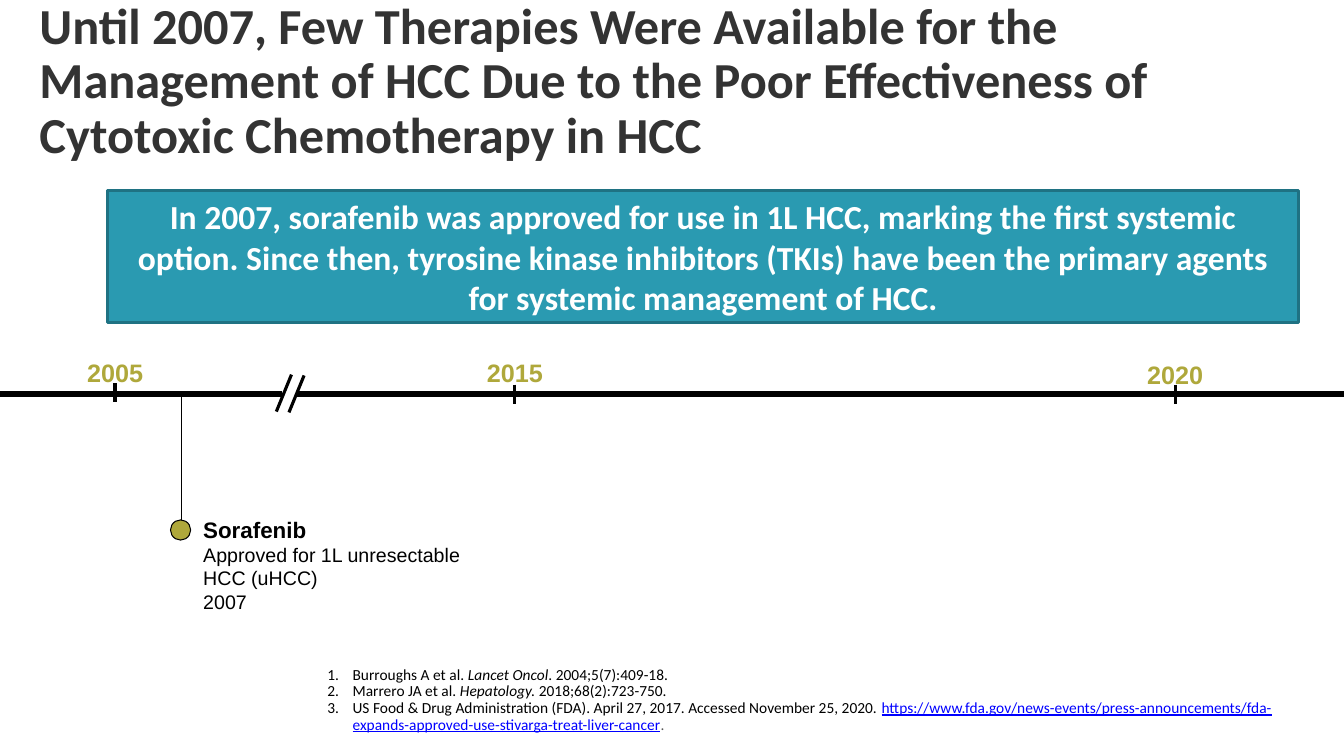
"""Build the slide on the early timeline of systemic HCC therapy."""
from dataclasses import dataclass

from lxml import etree
from pptx import Presentation
from pptx.dml.color import RGBColor
from pptx.enum.shapes import MSO_CONNECTOR, MSO_SHAPE
from pptx.enum.text import MSO_ANCHOR, MSO_AUTO_SIZE, PP_ALIGN
from pptx.oxml.ns import qn
from pptx.util import Inches, Pt

STRAIGHT = MSO_CONNECTOR.STRAIGHT
RECTANGLE, OVAL = MSO_SHAPE.RECTANGLE, MSO_SHAPE.OVAL
TOP, MIDDLE = MSO_ANCHOR.TOP, MSO_ANCHOR.MIDDLE
LEFT, CENTER = PP_ALIGN.LEFT, PP_ALIGN.CENTER
NO_FIT = MSO_AUTO_SIZE.NONE

BLACK = RGBColor(0x00, 0x00, 0x00)
WHITE = RGBColor(0xFF, 0xFF, 0xFF)
CHARCOAL = RGBColor(0x33, 0x33, 0x33)
GRAY = RGBColor(0x59, 0x59, 0x59)
LINK_BLUE = RGBColor(0x00, 0x00, 0xFF)
TEAL = RGBColor(0x2A, 0x9A, 0xB1)
DARK_TEAL = RGBColor(0x1F, 0x72, 0x83)
OLIVE = RGBColor(0xAF, 0xA8, 0x3B)

SLIDE_WIDTH, SLIDE_HEIGHT = Inches(13.333), Inches(7.5)
COLUMNS, ROWS = 160, 90
AXIS_ROW = 46.9
LABEL_WIDTH, LABEL_HEIGHT = 12, 3.6
TICK_LENGTH = 2.3
DOT_SIZE = 2.4


@dataclass(frozen=True)
class Style:
    """Font settings of a run."""
    font: str
    size: float
    color: RGBColor
    bold: bool = False
    italic: bool = False
    underline: bool = False


@dataclass(frozen=True)
class Area:
    """A rectangle in grid columns and rows."""
    left: float
    top: float
    width: float
    height: float


@dataclass(frozen=True)
class Stroke:
    """A straight black line between two grid points."""
    x1: float
    y1: float
    x2: float
    y2: float
    weight: float


@dataclass(frozen=True)
class Year:
    """A labelled tick on the time axis."""
    text: str
    column: float
    label_row: float
    tick_row: float


TITLE_STYLE = Style("Calibri", 36, CHARCOAL, bold=True)
BANNER_STYLE = Style("Calibri", 24, WHITE, bold=True)
YEAR_STYLE = Style("Arial", 18, OLIVE, bold=True)
DRUG_STYLE = Style("Arial", 16, BLACK, bold=True)
DETAIL_STYLE = Style("Arial", 14, BLACK)
CITATION = Style("Calibri", 11, BLACK)
JOURNAL = Style("Calibri", 11, BLACK, italic=True)
ADDRESS = Style("Calibri", 11, LINK_BLUE, underline=True)
PERIOD = Style("Calibri", 11, GRAY)

TITLE = ("Until 2007, Few Therapies Were Available for the Management of HCC "
         "Due to the Poor Effectiveness of Cytotoxic Chemotherapy in HCC")
BANNER = ("In 2007, sorafenib was approved for use in 1L HCC, marking the first "
          "systemic option. Since then, tyrosine kinase inhibitors (TKIs) have been "
          "the primary agents for systemic management of HCC.")
APPROVAL = [
    [("Sorafenib", DRUG_STYLE)],
    [("Approved for 1L unresectable", DETAIL_STYLE)],
    [("HCC (uHCC)", DETAIL_STYLE)],
    [("2007", DETAIL_STYLE)],
]
REFERENCES = [
    [("Burroughs A et al. ", CITATION), ("Lancet Oncol", JOURNAL),
     (". 2004;5(7):409-18.", CITATION)],
    [("Marrero JA et al. ", CITATION), ("Hepatology. ", JOURNAL),
     ("2018;68(2):723-750.", CITATION)],
    [("US Food & Drug Administration (FDA). April 27, 2017. "
      "Accessed November 25, 2020. ", CITATION),
     ("https://www.fda.gov/news-events/press-announcements/"
      "fda-expands-approved-use-stivarga-treat-liver-cancer", ADDRESS),
     (".", PERIOD)],
]
YEARS = [
    Year("2005", 13.7, 42.5, 45.6),
    Year("2015", 61.3, 42.5, 45.8),
    Year("2020", 139.9, 42.8, 45.8),
]
STROKES = [
    Stroke(21.6, 47, 21.6, 62.1, 0.75),
    Stroke(0, AXIS_ROW, 33.6, AXIS_ROW, 4.5),
    Stroke(35.3, AXIS_ROW, COLUMNS, AXIS_ROW, 4.5),
    Stroke(32.9, 49, 34.7, 44.6, 2.25),
    Stroke(34.4, 49.1, 36.2, 44.7, 2.25),
]


def across(columns: float) -> int:
    """Convert grid columns to a length."""
    return round(SLIDE_WIDTH * columns / COLUMNS)


def down(rows: float) -> int:
    """Convert grid rows to a length."""
    return round(SLIDE_HEIGHT * rows / ROWS)


def bounds(area: Area) -> tuple[int, int, int, int]:
    """Return the left, top, width and height of an area."""
    return across(area.left), down(area.top), across(area.width), down(area.height)


def number(para) -> None:
    """Give a paragraph automatic numbering with a hanging indent."""
    properties = para._p.get_or_add_pPr()
    properties.set("marL", str(Inches(0.25)))
    properties.set("indent", str(-Inches(0.25)))
    etree.SubElement(properties, qn("a:buFont"), typeface="+mj-lt")
    etree.SubElement(properties, qn("a:buAutoNum"), type="arabicPeriod")


def write(frame, lines: list, align=LEFT, anchor=TOP, wrap: bool = True,
          spacing: float = 1.0, numbered: bool = False) -> None:
    """Fill a text frame with paragraphs of styled runs."""
    frame.auto_size = NO_FIT
    frame.word_wrap = wrap
    frame.vertical_anchor = anchor
    for index, line in enumerate(lines):
        para = frame.add_paragraph() if index else frame.paragraphs[0]
        if numbered:
            number(para)
        para.alignment = align
        para.line_spacing = spacing
        for text, style in line:
            span = para.add_run()
            span.text = text
            font = span.font
            font.name, font.size = style.font, Pt(style.size)
            font.bold, font.italic = style.bold, style.italic
            font.underline = style.underline
            font.color.rgb = style.color


def add_text(page, area: Area, lines: list, inset: bool = False, **layout) -> None:
    """Add a text box, with or without inner margins."""
    frame = page.shapes.add_textbox(*bounds(area)).text_frame
    if not inset:
        frame.margin_left = frame.margin_right = 0
        frame.margin_top = frame.margin_bottom = 0
    write(frame, lines, **layout)


def add_box(page, kind, area: Area, fill: RGBColor, edge: RGBColor, weight: float):
    """Add a filled and outlined preset shape."""
    box = page.shapes.add_shape(kind, *bounds(area))
    box.shadow.inherit = False
    box.fill.solid()
    box.fill.fore_color.rgb = fill
    box.line.color.rgb = edge
    box.line.width = Pt(weight)
    return box


def add_stroke(page, stroke: Stroke) -> None:
    """Add a straight line without a shadow."""
    line = page.shapes.add_connector(STRAIGHT, across(stroke.x1), down(stroke.y1),
                                     across(stroke.x2), down(stroke.y2))
    line.line.color.rgb = BLACK
    line.line.width = Pt(stroke.weight)
    etree.SubElement(line._element.spPr, qn("a:effectLst"))


def add_year(page, year: Year) -> None:
    """Add a year label centred above its tick."""
    area = Area(year.column - LABEL_WIDTH / 2, year.label_row, LABEL_WIDTH, LABEL_HEIGHT)
    add_text(page, area, [[(year.text, YEAR_STYLE)]], align=CENTER, wrap=False)
    add_stroke(page, Stroke(year.column, year.tick_row, year.column,
                            year.tick_row + TICK_LENGTH, 2.25))


def main() -> None:
    """Build and save the deck."""
    deck = Presentation()
    deck.slide_width, deck.slide_height = SLIDE_WIDTH, SLIDE_HEIGHT
    page = deck.slides.add_slide(deck.slide_layouts[5])
    title = page.shapes.title
    title.left, title.top, title.width, title.height = bounds(Area(3.5, 2.3, 153.4, 15))
    write(title.text_frame, [[(TITLE, TITLE_STYLE)]], anchor=MIDDLE, spacing=0.9)
    add_text(page, Area(37.8, 78.8, 119, 9.6), REFERENCES, inset=True,
             spacing=0.9, numbered=True)
    banner = add_box(page, RECTANGLE, Area(12.8, 22.7, 141.8, 15.7), TEAL, DARK_TEAL, 2)
    write(banner.text_frame, [[(BANNER, BANNER_STYLE)]], align=CENTER, anchor=MIDDLE)
    add_text(page, Area(24.2, 61.4, 33.6, 7.7), APPROVAL, wrap=False)
    for stroke in STROKES:
        add_stroke(page, stroke)
    add_box(page, OVAL, Area(20.3, 61.9, DOT_SIZE, DOT_SIZE), OLIVE, BLACK, 0.75)
    for year in YEARS:
        add_year(page, year)
    deck.save("out.pptx")


if __name__ == "__main__":
    main()
